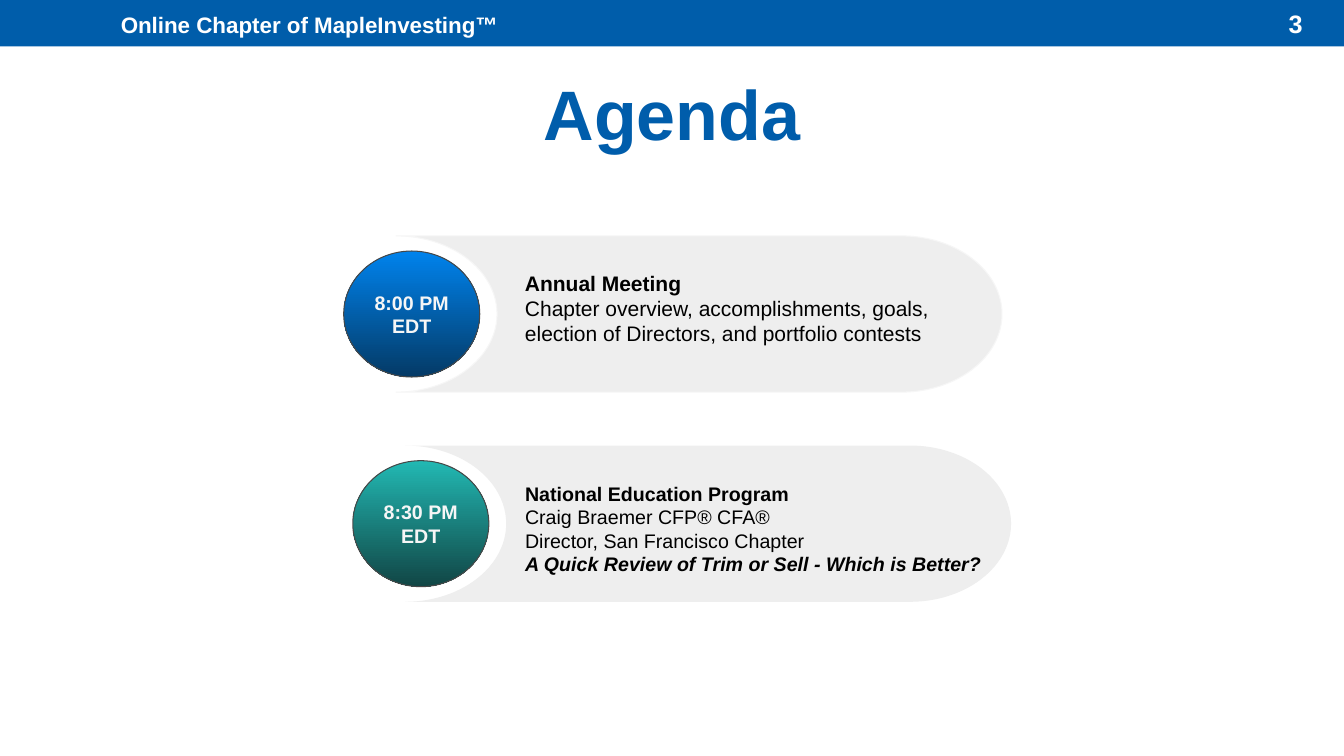
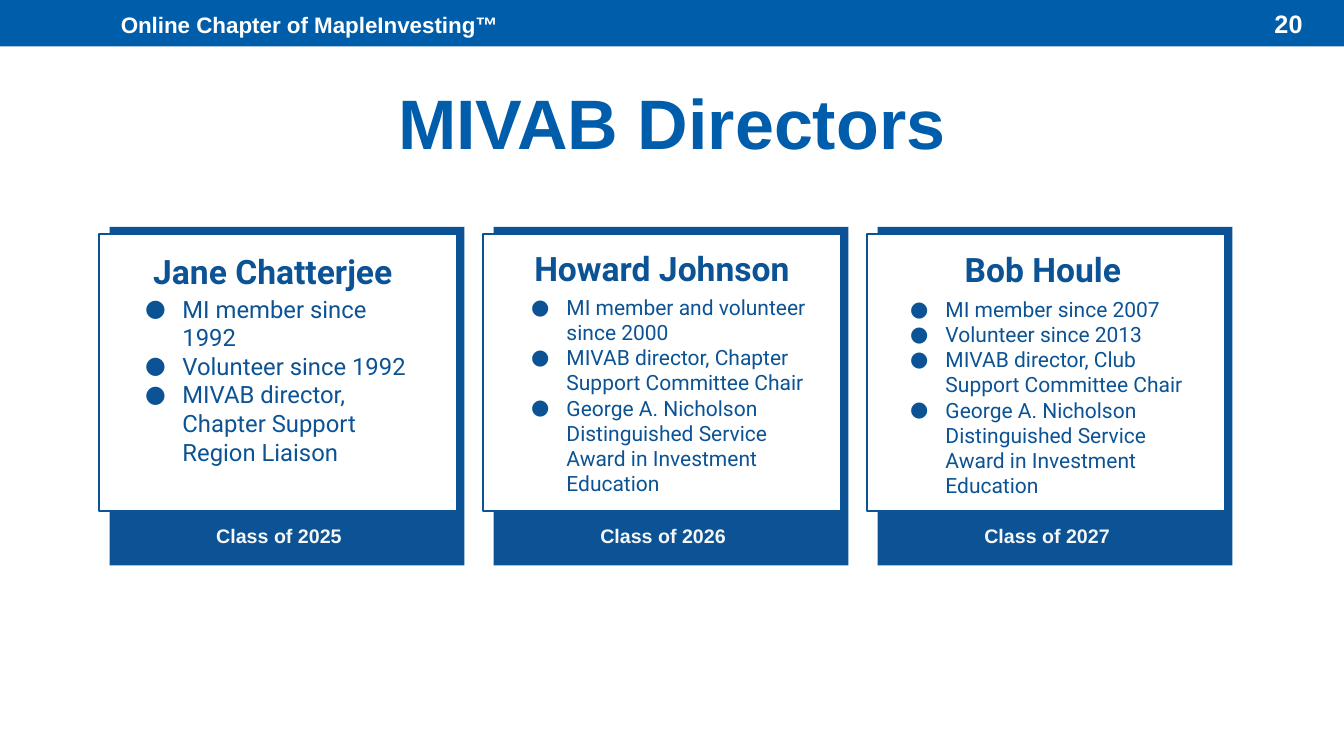
import lxml.etree
import pptx
import pptx.dml.color
import pptx.enum.shapes
import pptx.enum.text
import pptx.oxml.ns
import pptx.util

SHAPE = pptx.enum.shapes.MSO_SHAPE
ALIGN = pptx.enum.text.PP_ALIGN
ANCHOR = pptx.enum.text.MSO_ANCHOR


def rgb(value):
    return pptx.dml.color.RGBColor.from_string(value)


class Deck:
    """Shared style, a grid of 40 columns by 30 rows, and the current slide."""

    COLS, ROWS = 40, 30
    BAND, TITLE, NAVY = "005DAA", "005DAB", "0B5394"
    WHITE, PALE, PANEL = "FFFFFF", "F6F6F6", "EEEEEE"
    BLACK, EDGE = "000000", "474747"
    FONT, CARD_FONT = "Arial", "Roboto"
    ORGANIZATION = "Online Chapter of MapleInvesting™"

    def __init__(self):
        self.prs = pptx.Presentation()
        self.prs.slide_width = pptx.util.Inches(13.33)
        self.prs.slide_height = pptx.util.Inches(7.5)
        self.s = None

    def place(self, box):
        """Turn (column, row, columns, rows) into slide lengths."""
        col = self.prs.slide_width / self.COLS
        row = self.prs.slide_height / self.ROWS
        return [round(n * unit) for n, unit in zip(box, (col, row, col, row))]

    def slide(self, title, number, title_row):
        self.s = self.prs.slides.add_slide(self.prs.slide_layouts[6])
        self.shape(SHAPE.RECTANGLE, (0, 0, self.COLS, 1.84), self.BAND)
        self.text((3.3, 0.04, 18.42, 1.88), [(self.ORGANIZATION, "b")], 16, self.WHITE)
        self.text((2, title_row, 36, 4.32), [(title, "b")], 50, self.TITLE,
                  align=ALIGN.CENTER, anchor=ANCHOR.MIDDLE, margins=(0.1, 0.05))
        self.text((36.96, 0, 2.1, 1.84), [(str(number), "b")], 18, self.WHITE,
                  align=ALIGN.RIGHT, anchor=ANCHOR.MIDDLE, margins=(0.1, 0.05))

    def shape(self, kind, box, fill, line=None, width=0.75):
        """Add a preset shape; a pair of fills makes a top-to-bottom gradient."""
        sp = self.s.shapes.add_shape(kind, *self.place(box))
        sp.shadow.inherit = False
        if isinstance(fill, tuple):
            sp.fill.gradient()
            sp.fill.gradient_angle = 270
            for stop, color in zip(sp.fill.gradient_stops, fill):
                stop.color.rgb = rgb(color)
        else:
            sp.fill.solid()
            sp.fill.fore_color.rgb = rgb(fill)
        if line:
            sp.line.color.rgb = rgb(line)
            sp.line.width = pptx.util.Pt(width)
        else:
            sp.line.fill.background()
        return sp

    def text(self, box, lines, size, color, **style):
        sp = self.s.shapes.add_textbox(*self.place(box))
        self.fill_text(sp.text_frame, lines, size, color, **style)

    def fill_text(self, tf, lines, size, color, font=FONT, align=ALIGN.LEFT,
                  anchor=ANCHOR.TOP, margins=(0.1, 0.1), hang=None):
        """Fill a frame with (text, style) lines; style holds b and i flags."""
        tf.word_wrap = True
        tf.vertical_anchor = anchor
        tf.margin_left = tf.margin_right = pptx.util.Inches(margins[0])
        tf.margin_top = tf.margin_bottom = pptx.util.Inches(margins[1])
        tf.text = "\n".join(line for line, _ in lines)
        for p, (_, style) in zip(tf.paragraphs, lines):
            p.alignment = align
            if hang:
                self.bullet(p, hang, color, font)
            for r in p.runs:
                r.font.name = font
                r.font.size = pptx.util.Pt(size)
                r.font.color.rgb = rgb(color)
                r.font.bold = "b" in style
                r.font.italic = "i" in style

    def bullet(self, p, hang, color, font):
        qn = pptx.oxml.ns.qn
        pPr = p._p.get_or_add_pPr()
        pPr.set("marL", str(pptx.util.Inches(0.5)))
        pPr.set("indent", str(-pptx.util.Inches(hang)))
        clr = lxml.etree.SubElement(pPr, qn("a:buClr"))
        lxml.etree.SubElement(clr, qn("a:srgbClr"), val=color)
        lxml.etree.SubElement(pPr, qn("a:buFont"), typeface=font)
        lxml.etree.SubElement(pPr, qn("a:buChar"), char="●")

    def time_slot(self, col, row, time, gradient, outline=None):
        circle = self.shape(SHAPE.OVAL, (col, row, 4.05, 5), gradient, self.EDGE)
        self.fill_text(circle.text_frame, [(time, "b"), ("EDT", "b")], 14, self.PALE,
                       align=ALIGN.CENTER, anchor=ANCHOR.MIDDLE)
        panel = self.shape(SHAPE.FLOWCHART_STORED_DATA,
                           (col + 1.56, row - 0.6, 18.03, 6.2), self.PANEL, outline)
        panel.rotation = 180

    def card(self, col, year, name, name_box, facts, facts_box, size, hang):
        """Add a director card; inner boxes count columns from the card's left."""
        self.shape(SHAPE.RECTANGLE, (col + 0.32, 9, 10.56, 13.44), self.NAVY)
        self.shape(SHAPE.RECTANGLE, (col, 9.28, 10.65, 11), self.WHITE, self.NAVY, 1.5)
        for box, lines, points, indent in (
                (facts_box, [(fact, "") for fact in facts], size, hang),
                (name_box, [(name, "b")], 24, None)):
            self.text((col + box[0], *box[1:]), lines, points, self.NAVY,
                      font=self.CARD_FONT, margins=(0.13, 0.13), hang=indent)
        self.text((col + 3.2, 20.4, 5.97, 1.76), [(f"Class of {year}", "b")],
                  14, self.PALE)


def agenda(deck):
    deck.slide("Agenda", 3, 2.32)
    deck.time_slot(10.23, 9.96, "8:00 PM", ("0083ED", "043A66"), deck.PALE)
    deck.time_slot(10.5, 18.28, "8:30 PM", ("22B8B3", "114645"))
    deck.text((15.33, 10.32, 13.95, 4.56), [
        ("Annual Meeting", "b"),
        ("Chapter overview, accomplishments, goals, election of Directors, "
         "and portfolio contests", ""),
    ], 15, deck.BLACK)
    deck.text((15.33, 18.72, 15.09, 4.56), [
        ("National Education Program", "b"),
        ("Craig Braemer CFP® CFA®", ""),
        ("Director, San Francisco Chapter", ""),
        ("A Quick Review of Trim or Sell - Which is Better?", "bi"),
    ], 14, deck.BLACK)


def directors(deck):
    deck.slide("MIVAB Directors", 20, 2.68)
    award = "George A. Nicholson Distinguished Service Award in Investment Education"
    cards = [
        ("Jane Chatterjee", (1.23, 9.44, 9.45, 2.84),
         ["MI member since 1992", "Volunteer since 1992",
          "MIVAB director, Chapter Support Region Liaison"],
         (0.6, 11.16, 9.45, 7.68), 17, 0.37),
        ("Howard Johnson", (1.14, 9.32, 8.55, 2.52),
         ["MI member and volunteer since 2000",
          "MIVAB director, Chapter Support Committee Chair", award],
         (0.6, 11.16, 9.45, 10.28), 15, 0.35),
        ("Bob Houle", (2.52, 9.36, 7.86, 2.44),
         ["MI member since 2007", "Volunteer since 2013",
          "MIVAB director, Club Support Committee Chair", award],
         (0.45, 11.24, 9.45, 9.08), 15, 0.35),
    ]
    for i, card in enumerate(cards):
        deck.card(2.94 + 11.43 * i, 2025 + i, *card)


def main():
    deck = Deck()
    agenda(deck)
    directors(deck)
    deck.prs.save("out.pptx")


if __name__ == "__main__":
    main()
